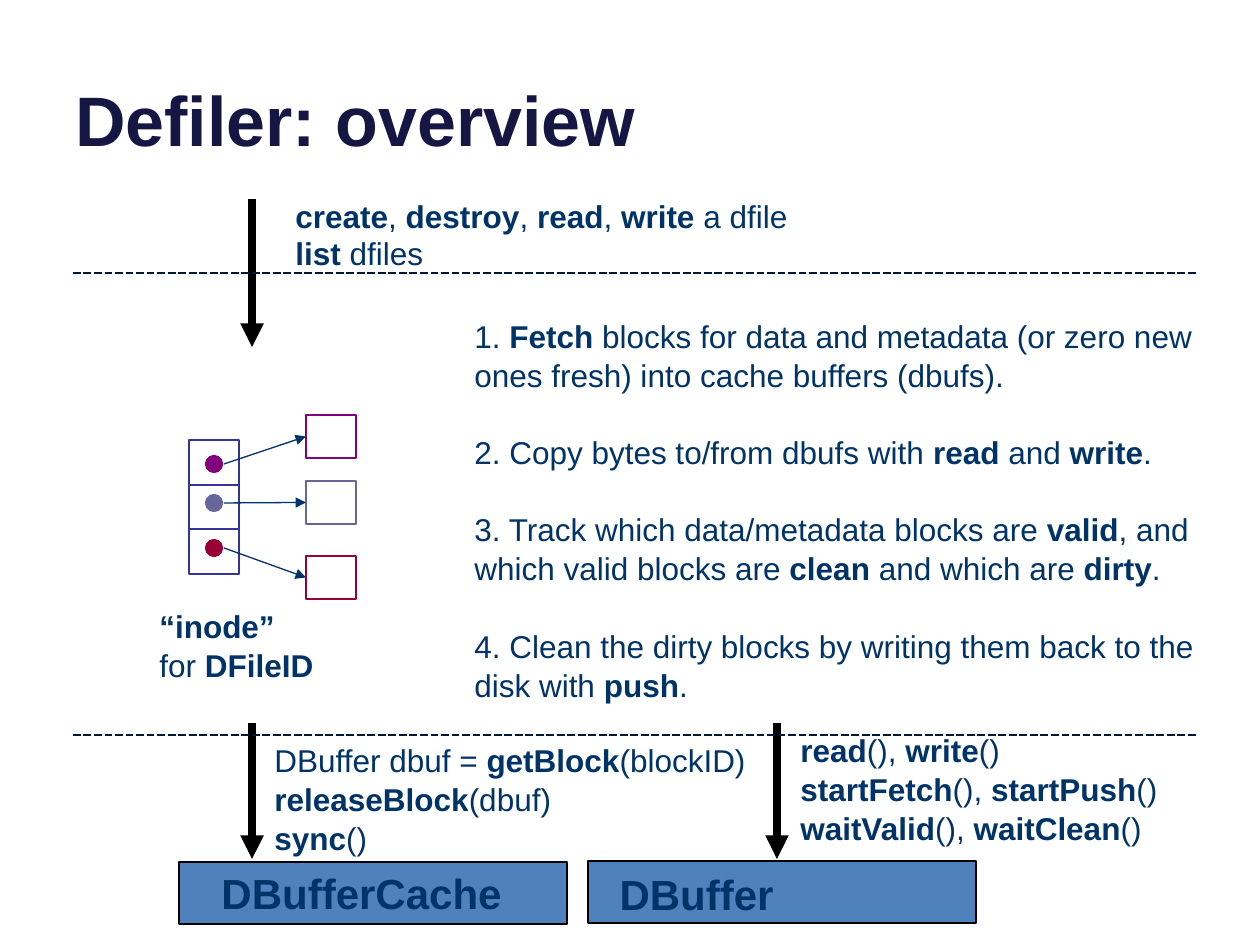
from dataclasses import dataclass
from typing import Any

from lxml.etree import SubElement
from pptx import Presentation
from pptx.dml.color import RGBColor
from pptx.enum.dml import MSO_LINE
from pptx.enum.shapes import MSO_CONNECTOR, MSO_SHAPE
from pptx.enum.text import MSO_ANCHOR, MSO_AUTO_SIZE, PP_ALIGN
from pptx.oxml.ns import qn
from pptx.util import Emu, Pt

PX_PER_INCH = 126


@dataclass(frozen=True)
class Theme:
    font: str = "Arial"
    title: str = "161645"
    text: str = "003367"
    black: str = "000000"
    white: str = "FFFFFF"
    block: str = "4F81BD"
    boundary: str = "001934"
    inode: str = "333399"
    title_size: int = 40
    block_size: int = 24
    text_size: int = 18
    heavy: float = 4.5
    dashed: float = 1.5
    outline: float = 1.25
    thin: float = 0.75


THEME = Theme()


@dataclass(frozen=True)
class Box:
    left: int
    top: int
    width: int
    height: int


@dataclass(frozen=True)
class Label:
    box: Box
    lines: tuple[str, ...]  # asterisks switch bold on and off
    size: int = THEME.text_size
    color: str = THEME.text
    align: PP_ALIGN = PP_ALIGN.LEFT
    anchor: MSO_ANCHOR = MSO_ANCHOR.TOP
    wrap: bool = False
    grow: bool = True
    spacing: float = 1.04
    gap: float = 0


@dataclass(frozen=True)
class Pointer:
    color: str
    dot_middle: int
    block_top: int


# Content
TITLE = Label(Box(63, -47, 1134, 214), ("*Defiler: overview*",), THEME.title_size,
              THEME.title, anchor=MSO_ANCHOR.BOTTOM, wrap=True, grow=False, spacing=1)
LABELS = (
    Label(Box(788, 723, 388, 127), ("*read*(), *write*()", "*startFetch*(), *startPush*()",
                                    "*waitValid*(), *waitClean*()")),
    Label(Box(262, 733, 501, 127), ("DBuffer dbuf = *getBlock*(blockID)",
                                    "*releaseBlock*(dbuf)", "*sync*()")),
    Label(Box(283, 189, 522, 50), ("*create*, *destroy*, *read*, *write* a dfile",)),
    Label(Box(283, 226, 155, 50), ("*list* dfiles",)),
    Label(Box(147, 599, 181, 89), ("*“inode”*", "for *DFileID*")),
    Label(Box(462, 309, 756, 394), (
        "1. *Fetch* blocks for data and metadata (or zero new ones fresh) "
        "into cache buffers (dbufs).",
        "2. Copy bytes to/from dbufs with *read* and *write*.",
        "3. Track which data/metadata blocks are *valid*, and which valid blocks "
        "are *clean* and which are *dirty*.",
        "4. Clean the dirty blocks by writing them back to the disk with *push*.",
    ), wrap=True, gap=21.6),
)
BLOCKS = (
    (Box(179, 862, 388, 62), Label(Box(207, 859, 309, 64), ("*DBufferCache*",),
                                   THEME.block_size, align=PP_ALIGN.CENTER)),
    (Box(588, 861, 388, 62), Label(Box(606, 860, 181, 64), ("*DBuffer*",),
                                   THEME.block_size, align=PP_ALIGN.CENTER)),
)
CALL_ARROWS = ((252, 199, 347), (252, 723, 859), (777, 723, 859))  # x, top, bottom
BOUNDARIES = (273, 735)
INODE = Box(189, 440, 50, 134)
POINTERS = (Pointer("800080", 464, 415), Pointer("666699", 503, 481),
            Pointer("990033", 548, 556))
DOT = 16
DATA_LEFT, DATA_WIDTH, DATA_HEIGHT = 306, 50, 43


def px(value: int) -> Emu:
    return Emu(round(value * 914400 / PX_PER_INCH))


def place(box: Box) -> tuple[Emu, ...]:
    return px(box.left), px(box.top), px(box.width), px(box.height)


def set_values(target: Any, values: dict[str, Any]) -> None:
    for name, value in values.items():
        setattr(target, name, value)


def add_label(slide: Any, label: Label) -> None:
    frame = slide.shapes.add_textbox(*place(label.box)).text_frame
    set_values(frame, {
        "word_wrap": label.wrap,
        "vertical_anchor": label.anchor,
        "auto_size": MSO_AUTO_SIZE.SHAPE_TO_FIT_TEXT if label.grow else MSO_AUTO_SIZE.NONE,
    })
    for index, line in enumerate(label.lines):
        paragraph = frame.add_paragraph() if index else frame.paragraphs[0]
        last = index == len(label.lines) - 1
        set_values(paragraph, {"alignment": label.align, "line_spacing": label.spacing,
                               "space_after": Pt(0 if last else label.gap)})
        for part, words in enumerate(line.split("*")):
            if words:
                run = paragraph.add_run()
                run.text = words
                set_values(run.font, {"name": THEME.font, "size": Pt(label.size),
                                      "bold": part % 2 == 1})
                run.font.color.rgb = RGBColor.from_string(label.color)


def add_figure(slide: Any, kind: MSO_SHAPE, box: Box, fill: str, line: str,
               width: float = THEME.outline) -> Any:
    shape = slide.shapes.add_shape(kind, *place(box))
    shape.shadow.inherit = False
    shape.fill.solid()
    shape.fill.fore_color.rgb = RGBColor.from_string(fill)
    shape.line.color.rgb = RGBColor.from_string(line)
    shape.line.width = Pt(width)
    return shape


def add_line(slide: Any, start: tuple[int, int], end: tuple[int, int], color: str,
             width: float, arrow: bool = False, dash: MSO_LINE | None = None) -> Any:
    connector = slide.shapes.add_connector(
        MSO_CONNECTOR.STRAIGHT, *map(px, start), *map(px, end))
    connector.line.color.rgb = RGBColor.from_string(color)
    set_values(connector.line, {"width": Pt(width), "dash_style": dash})
    if arrow:
        SubElement(connector.line._get_or_add_ln(), qn("a:tailEnd"), type="triangle")
    SubElement(connector._element.spPr, qn("a:effectLst"))
    return connector


def add_inode(slide: Any) -> None:
    add_figure(slide, MSO_SHAPE.RECTANGLE, INODE, THEME.white, THEME.inode)
    right = INODE.left + INODE.width
    for row in (1, 2):
        y = INODE.top + round(row * INODE.height / 3)
        add_line(slide, (INODE.left, y), (right, y), THEME.inode, THEME.outline)
    dot_left = INODE.left + (INODE.width - DOT) // 2
    for pointer in POINTERS:
        dot = Box(dot_left, pointer.dot_middle - DOT // 2, DOT, DOT)
        add_figure(slide, MSO_SHAPE.OVAL, dot, pointer.color, pointer.color)
        data = Box(DATA_LEFT, pointer.block_top, DATA_WIDTH, DATA_HEIGHT)
        block = add_figure(slide, MSO_SHAPE.RECTANGLE, data, THEME.white, pointer.color)
        arrow = add_line(slide, (dot_left + DOT + 2, pointer.dot_middle),
                         (DATA_LEFT, pointer.block_top + DATA_HEIGHT // 2),
                         THEME.text, THEME.thin, arrow=True)
        arrow.end_connect(block, 1)


def main() -> None:
    presentation = Presentation()
    set_values(presentation, {"slide_width": px(1260), "slide_height": px(945)})
    slide = presentation.slides.add_slide(presentation.slide_layouts[6])

    # Calls between the layers
    for x, top, bottom in CALL_ARROWS:
        add_line(slide, (x, top), (x, bottom), THEME.black, THEME.heavy, arrow=True)

    # Lower layer blocks
    for box, label in BLOCKS:
        add_figure(slide, MSO_SHAPE.RECTANGLE, box, THEME.block, THEME.black, THEME.thin)
        add_label(slide, label)

    # Layer boundaries
    for y in BOUNDARIES:
        add_line(slide, (73, y), (1197, y), THEME.boundary, THEME.dashed,
                 dash=MSO_LINE.SQUARE_DOT)

    # File map and wording
    add_inode(slide)
    for label in (TITLE, *LABELS):
        add_label(slide, label)

    presentation.save("out.pptx")


if __name__ == "__main__":
    main()
